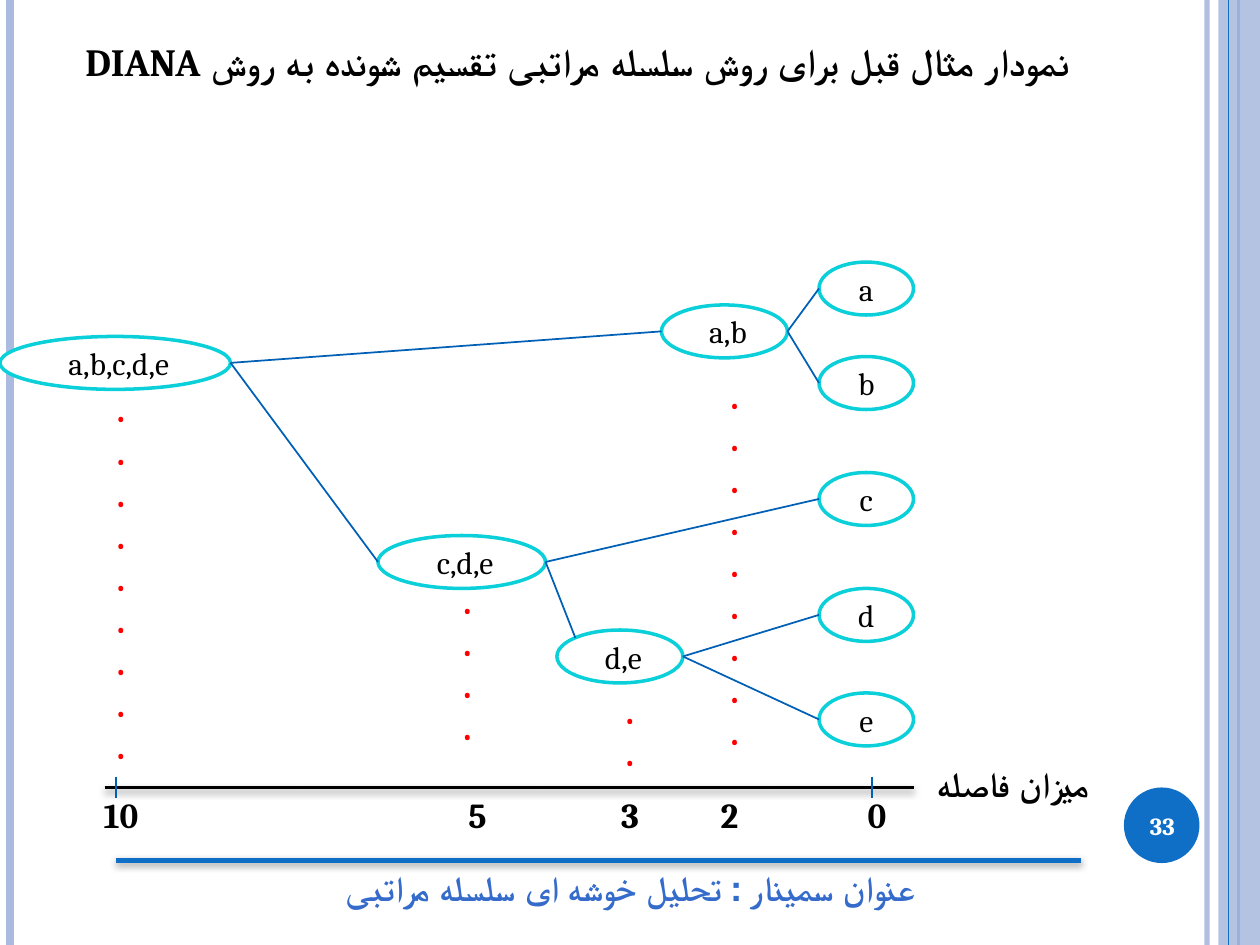
from lxml import etree
from pptx import Presentation
from pptx.dml.color import RGBColor
from pptx.enum.shapes import MSO_CONNECTOR, MSO_SHAPE
from pptx.enum.text import MSO_ANCHOR, PP_ALIGN
from pptx.oxml.ns import qn
from pptx.util import Inches, Pt

STRAIGHT = MSO_CONNECTOR.STRAIGHT
OVAL, RECTANGLE = MSO_SHAPE.OVAL, MSO_SHAPE.RECTANGLE
TOP, MIDDLE = MSO_ANCHOR.TOP, MSO_ANCHOR.MIDDLE
CENTER = PP_ALIGN.CENTER

WIDTH, HEIGHT = 10, 7.5
FONT = "Cambria"
BLACK, WHITE, RED = "000000", "FFFFFF", "FF0000"
BLUE, PALE, TEAL, BRANCH, CAPTION = "0F6FC6", "ABBBDF", "0BD0D9", "0060B6", "356BCA"

TITLE = "نمودار مثال قبل برای روش سلسله مراتبی تقسیم شونده به روش DIANA"
FOOTER = "عنوان سمینار : تحلیل خوشه ای سلسله مراتبی"
AXIS_TITLE = "میزان فاصله"
PAGE_NUMBER = "33"

# Vertical stripes: x, colour, weight, opacity in percent
STRIPES = [(9.58, PALE, 3, 93), (0.08, PALE, 4.5, 100), (9.83, BLUE, 1.5, 100)]

# Clusters: label -> left, top, width
NODE_HEIGHT = 0.42
NODES = {
    "a": (6.5, 2.08, 0.75),
    "b": (6.5, 2.83, 0.75),
    "c": (6.5, 3.75, 0.75),
    "d": (6.5, 4.67, 0.75),
    "e": (6.5, 5.5, 0.75),
    " a,b": (5.25, 2.42, 1),
    " d,e": (4.42, 5, 1),
    " a,b,c,d,e": (0, 2.67, 1.83),
    " c,d,e": (3, 4.25, 1.33),
}
# Splits: parent, child, whether the branch meets the child's upper left
SPLITS = [
    (" a,b", "a", False), (" a,b,c,d,e", " a,b", False), (" a,b", "b", False),
    (" a,b,c,d,e", " c,d,e", False), (" c,d,e", "c", False),
    (" c,d,e", " d,e", True), (" d,e", "d", False), (" d,e", "e", False),
]

# Distance axis: label -> centre
AXIS_Y = 6.25
AXIS_LABELS = {"0": 6.96, "2": 5.79, "3": 5, "5": 3.79, "10": 0.96}
TICKS = [0.92, 6.92]
# Dotted guides: centre, top, number of dots
GUIDES = [(5.83, 2.92, 9), (0.96, 3.03, 9), (3.71, 4.55, 4), (5, 5.42, 2)]


def color(value):
    return RGBColor.from_string(value)


def set_opacity(fill_parent, percent):
    tint = next(fill_parent.iter(qn("a:srgbClr")))
    etree.SubElement(tint, qn("a:alpha")).set("val", str(percent * 1000))


def add_line(slide, start, end, tint, weight, opacity=100, shadow=None):
    line = slide.shapes.add_connector(STRAIGHT, *map(Inches, (*start, *end)))
    line.line.color.rgb = color(tint)
    line.line.width = Pt(weight)
    properties = line._element.spPr
    if opacity < 100:
        set_opacity(properties, opacity)
    effects = etree.SubElement(properties, qn("a:effectLst"))
    if shadow:
        distance, percent = shadow
        outer = etree.SubElement(effects, qn("a:outerShdw"), blurRad=str(Pt(4)),
                                 dist=str(Pt(distance)), dir="5400000", rotWithShape="0")
        tint_node = etree.SubElement(outer, qn("a:srgbClr"), val=BLACK)
        etree.SubElement(tint_node, qn("a:alpha"), val=str(percent * 1000))


def add_shape(slide, kind, area, fill, outline=None):
    shape = slide.shapes.add_shape(kind, *map(Inches, area))
    shape.shadow.inherit = False
    shape.fill.solid()
    shape.fill.fore_color.rgb = color(fill)
    if outline:
        shape.line.color.rgb = color(outline)
        shape.line.width = Pt(2)
    else:
        shape.line.fill.background()
    return shape


def write(shape, lines, size, tint, bold=True, anchor=TOP, rtl=False):
    frame = shape.text_frame
    frame.word_wrap = True
    frame.vertical_anchor = anchor
    frame.text = "\n".join(lines)
    for para in frame.paragraphs:
        para.alignment = CENTER
        para.font.name, para.font.size, para.font.bold = FONT, Pt(size), bold
        para.font.color.rgb = color(tint)
        if rtl:
            para._p.get_or_add_pPr().set("rtl", "1")


def add_text(slide, area, lines, size, tint, **style):
    box = slide.shapes.add_textbox(*map(Inches, area))
    write(box, lines, size, tint, **style)


def add_branch(slide, parent, child, upper_left):
    left, top, width = NODES[parent]
    start = (left + width, top + NODE_HEIGHT / 2)
    left, top, width = NODES[child]
    end = (left, top + NODE_HEIGHT / 2)
    if upper_left:
        corner = (1 - 0.5 ** 0.5) / 2
        end = (left + width * corner, top + NODE_HEIGHT * corner)
    add_line(slide, start, end, BRANCH, 1)


def main():
    deck = Presentation()
    deck.slide_width, deck.slide_height = Inches(WIDTH), Inches(HEIGHT)
    slide = deck.slides.add_slide(deck.slide_layouts[6])

    # Side decoration and page number
    for x, tint, weight, opacity in STRIPES:
        add_line(slide, (x, 0), (x, HEIGHT), tint, weight, opacity)
    band = add_shape(slide, RECTANGLE, (9.67, 0, 0.33, HEIGHT), PALE)
    set_opacity(band._element.spPr, 87)
    add_line(slide, (9.75, 0), (9.75, HEIGHT), BLUE, 0.75)
    add_shape(slide, OVAL, (8.92, 6.25, 0.6, 0.6), BLUE)
    add_text(slide, (8.89, 6.27, 0.67, 0.57), [PAGE_NUMBER], 14, WHITE, anchor=MIDDLE)

    # Title and footer
    add_text(slide, (0.5, 0.25, 8.17, 1.25), [TITLE], 22, BLACK, rtl=True)
    add_text(slide, (1.15, 6.83, 7.71, 0.44), [FOOTER], 20, CAPTION)
    add_line(slide, (0.92, 6.83), (8.58, 6.83), BLUE, 2.75, shadow=(1.6, 42))

    # Distance axis
    add_line(slide, (0.83, AXIS_Y), (7.25, AXIS_Y), BLACK, 2, shadow=(2, 40))
    for x in TICKS:
        add_line(slide, (x, AXIS_Y - 0.08), (x, AXIS_Y + 0.08), BRANCH, 1)
    for label, center in AXIS_LABELS.items():
        add_text(slide, (center - 0.46, AXIS_Y, 0.92, 0.44), [label], 20, BLACK)
    add_text(slide, (7.33, 6, 1.42, 0.44), [AXIS_TITLE], 20, BLACK)

    # Clusters, guides and branches
    for label, (left, top, width) in NODES.items():
        node = add_shape(slide, OVAL, (left, top, width, NODE_HEIGHT), WHITE, TEAL)
        write(node, [label], 18, BLACK, bold=False, anchor=MIDDLE)
    for center, top, count in GUIDES:
        area = (center - 0.37, top, 0.74, 0.1 + count / 3)
        add_text(slide, area, ["."] * count, 20, RED)
    for split in SPLITS:
        add_branch(slide, *split)

    deck.save("out.pptx")


if __name__ == "__main__":
    main()
